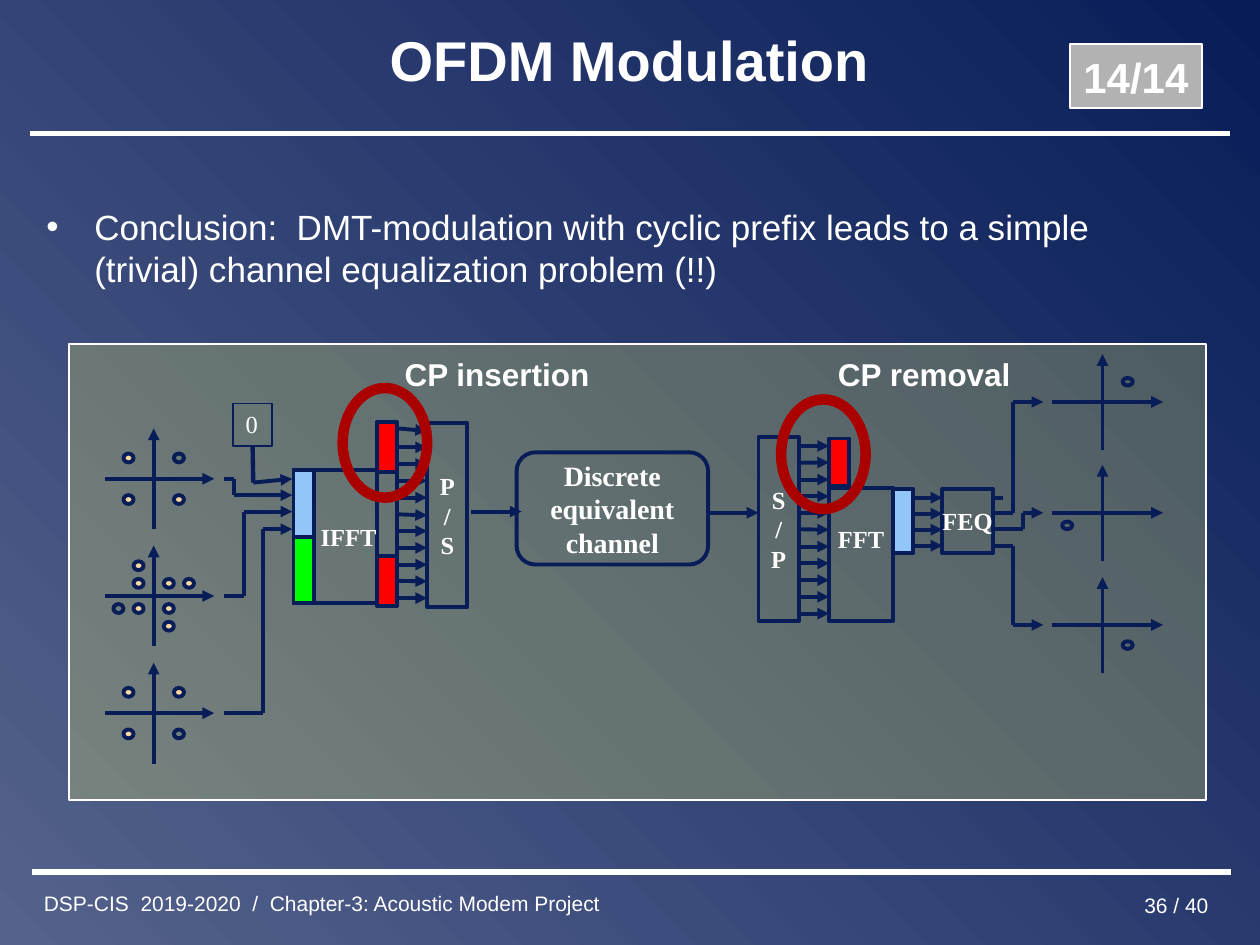
import pptx
import pptx.dml.color
import pptx.enum.shapes
import pptx.enum.text
import pptx.oxml.ns
import pptx.util
from lxml import etree

RGB = pptx.dml.color.RGBColor
WHITE = RGB(0xFF, 0xFF, 0xFF)
NAVY = RGB(0x08, 0x1D, 0x58)
SLATE = RGB(0x54, 0x62, 0x8C)
GRAY = RGB(0xB2, 0xB2, 0xB2)
YELLOW = RGB(0xFF, 0xFF, 0x66)
RED = RGB(0xFF, 0, 0)
DARK = RGB(0xAA, 0, 0)
GREEN = RGB(0, 0xFF, 0)
SKY = RGB(0x93, 0xC6, 0xF8)
PEACH = RGB(0xFC, 0xD7, 0x9F)

KIND = pptx.enum.shapes.MSO_SHAPE
RECT, OVAL, ROUND = KIND.RECTANGLE, KIND.OVAL, KIND.ROUNDED_RECTANGLE
ALIGN = pptx.enum.text.PP_ALIGN
TOP, MID = pptx.enum.text.MSO_ANCHOR.TOP, pptx.enum.text.MSO_ANCHOR.MIDDLE
Pt = pptx.util.Pt
qn = pptx.oxml.ns.qn

deck = pptx.Presentation()
deck.slide_width = pptx.util.Inches(10)
deck.slide_height = pptx.util.Inches(7.5)
CELL = deck.slide_width // 100  # the grid has 100 columns and 75 rows
slide = deck.slides.add_slide(deck.slide_layouts[6])
shapes = slide.shapes

back = slide.background.fill
back.gradient()
back.gradient_angle = 45
for stop, color in zip(back.gradient_stops, (SLATE, NAVY)):
    stop.color.rgb = color


def box(kind, x, y, w, h, fill=None, edge=NAVY, wide=2.25, text="", size=14,
        face="Times New Roman", bold=True, align=ALIGN.CENTER, anchor=MID, wrap=False):
    """Add a shape, or a text box when kind is None, in grid cells."""
    place = [round(v * CELL) for v in (x, y, w, h)]
    if kind is None:
        shape = shapes.add_textbox(*place)
    else:
        shape = shapes.add_shape(kind, *place)
        shape.shadow.inherit = False
        shape.line.color.rgb = edge
        shape.line.width = Pt(wide)
        if fill is None:
            shape.fill.background()
        else:
            shape.fill.solid()
            shape.fill.fore_color.rgb = fill
    if text:
        frame = shape.text_frame
        frame.text = text
        frame.word_wrap = wrap
        frame.vertical_anchor = anchor
        for para in frame.paragraphs:
            para.alignment = align
            font = para.font
            font.name, font.size, font.bold = face, Pt(size), bold
            font.color.rgb = WHITE
    return shape


def wire(*points, tip=True, color=NAVY, wide=2.25):
    """Join the points with straight connectors; return the last one."""
    for start, end in zip(points, points[1:]):
        ends = [round(v * CELL) for v in (*start, *end)]
        link = shapes.add_connector(pptx.enum.shapes.MSO_CONNECTOR.STRAIGHT, *ends)
        link.line.color.rgb = color
        link.line.width = Pt(wide)
        etree.SubElement(link._element.spPr, qn("a:effectLst"))
    if tip:
        etree.SubElement(link.line._get_or_add_ln(), qn("a:tailEnd"), type="triangle")
    return link


# Frame of the slide
wire((97.6, 10.6), (2.4, 10.6), tip=False, color=WHITE, wide=3)
wire((97.7, 69.2), (2.5, 69.2), tip=False, color=WHITE, wide=3)
box(None, 2.5, 70, 55, 3.3, text="DSP-CIS  2019-2020  /  Chapter-3: Acoustic Modem Project",
    size=12, face="Arial", bold=False, align=ALIGN.LEFT)
box(None, 76.9, 70, 20, 3.7, text="36 / 40", size=12, face="Arial", bold=False,
    align=ALIGN.RIGHT)
title = box(None, 3.2, 1, 93.5, 8.5, text="OFDM Modulation", size=32, face="Arial", wrap=True)
title.text_frame.paragraphs[0].line_spacing = 0.75
body = box(None, 2.7, 15.8, 93.3, 8, size=20, face="Arial", bold=False, align=ALIGN.LEFT,
           anchor=TOP, wrap=True,
           text="Conclusion:  DMT-modulation with cyclic prefix leads to a simple "
                "(trivial) channel equalization problem (!!)")
props = body.text_frame.paragraphs[0]._p.get_or_add_pPr()
props.set("marL", str(round(3.8 * CELL)))
props.set("indent", str(round(-3.8 * CELL)))
etree.SubElement(props, qn("a:buFont"), typeface="Arial")
etree.SubElement(props, qn("a:buChar"), char="•")
props.append(props.find(qn("a:defRPr")))
box(RECT, 84.9, 3.5, 10.5, 5.1, GRAY, WHITE, 1, "14/14", 24, "Arial")

panel = box(RECT, 5.5, 27.3, 90.2, 36.2, YELLOW, WHITE, 1)
tint = panel.fill._xPr.find(qn("a:solidFill"))[0]
etree.SubElement(tint, qn("a:alpha"), val="24000")

# Receiver blocks
cut = box(RECT, 65.8, 34.8, 1.6, 3.8, RED)
split = box(RECT, 60.2, 34.7, 3.2, 14.6, text="S/P", wrap=True)
fft = box(RECT, 65.8, 38.7, 5.1, 10.6, text="FFT", anchor=TOP)
fft.text_frame.margin_top = round(2.9 * CELL)
box(RECT, 70.9, 38.8, 1.6, 5.1, SKY)
box(RECT, 74.8, 38.8, 4, 5.1, text="FEQ")
wire((56.3, 40.7), (60.2, 40.7))
for i in range(11):
    y = 35.4 + 1.33 * i
    link = wire((63.4, y), (65.8, y))
    if i == 1:
        link.end_connect(cut, 1)
    if i == 5:
        link.begin_connect(split, 3)
for i in range(4):
    y = 39.5 + 1.27 * i
    wire((72.4, y), (74.8, y))
wire((78.8, 39.5), (79.6, 39.5), tip=False)
wire((78.8, 40.7), (80.4, 40.7), (80.4, 31.9), (82.8, 31.9))
wire((78.8, 42), (81.2, 42), (81.2, 40.7), (82.8, 40.7))
wire((78.8, 43.3), (80.4, 43.3), (80.4, 49.6), (82.8, 49.6))

# Constellations: centre, arm lengths (left, right, up), dot height, filled and hollow dots
PLOTS = [
    (12.2, 38, 3.9, 4.8, 4, 0.7, [(-2, -1.65), (-2, 1.65), (2, 1.65)], [(2, -1.65)]),
    (12.2, 47.3, 3.9, 4.8, 4, 0.7,
     [(1.2, -1), (-1.2, -1), (2.8, -1), (-1.2, 1), (1.2, 1), (-1.2, -2.4), (1.2, 2.4)],
     [(-2.8, 1)]),
    (12.2, 56.6, 3.9, 4.8, 4, 0.7, [(-2, -1.65), (2, -1.65), (-2, 1.65)], [(2, 1.65)]),
    (87.5, 31.9, 4, 4.8, 3.8, 0.6, [], [(2, -1.6)]),
    (87.5, 40.7, 4, 4.8, 3.8, 0.6, [], [(-2.8, 1)]),
    (87.5, 49.6, 4, 4.8, 3.8, 0.6, [], [(2, 1.6)]),
]
for x, y, left, right, up, high, full, bare in PLOTS:
    wire((x, y + up), (x, y - up))
    wire((x - left, y), (x + right, y))
    for dots, fill in ((full, PEACH), (bare, None)):
        for dx, dy in dots:
            box(OVAL, x + dx - 0.4, y + dy - high / 2, 0.8, high, fill)

# Sender blocks
ifft = box(RECT, 23.3, 37.3, 6.6, 10.6, text="IFFT", align=ALIGN.RIGHT)
ifft.text_frame.margin_right = 0
box(RECT, 23.3, 37.3, 1.6, 5.3, SKY)
box(RECT, 23.3, 42.6, 1.6, 5.3, GREEN)
head = box(RECT, 29.9, 33.5, 1.6, 4, RED)
join = box(RECT, 33.9, 33.6, 3.2, 14.6, text="P/S", wrap=True)
tail = box(RECT, 29.9, 44.1, 1.6, 4, RED)
zero = box(RECT, 18.5, 32, 3.1, 3.4, wide=0.75, text="0", bold=False, align=ALIGN.LEFT,
           anchor=TOP)
drop = wire((20.1, 35.4), (20.1, 38.3), tip=False, wide=2.5)
drop.begin_connect(zero, 2)
wire((20.1, 38.3), (23.2, 38))
wire((17.8, 38), (18.6, 38), (18.6, 39.3), (23.2, 39.3))
wire((17.8, 47.3), (19.4, 47.3), (19.4, 40.6), (23.2, 40.6))
wire((17.8, 56.6), (20.9, 56.6), (20.9, 42), (23.2, 42))
wire((31.5, 34), (33.9, 34.2))
for i in range(10):
    y = 35.5 + 1.33 * i
    link = wire((31.5, y), (33.9, y))
    if i == 0:
        link.begin_connect(head, 3)
    if i == 4:
        link.end_connect(join, 1)
    if i == 8:
        link.begin_connect(tail, 3)
wire((31.5, 44.6), (31.5, 37.5), tip=False, wide=2.5)
wire((37.4, 40.6), (41.4, 40.6))

# Channel and prefix marks
box(ROUND, 41, 35.9, 15.2, 8.9, text="Discrete\nequivalent\nchannel", size=16)
for x, y in ((62, 31.7), (27.2, 30.8)):
    box(OVAL, x, y, 6.7, 8.7, edge=DARK, wide=6)
for x, w, text in ((31.1, 16.7, "CP insertion"), (65.4, 15.9, "CP removal")):
    box(None, x, 27.7, w, 4, text=text, size=18, face="Arial")

deck.save("out.pptx")
